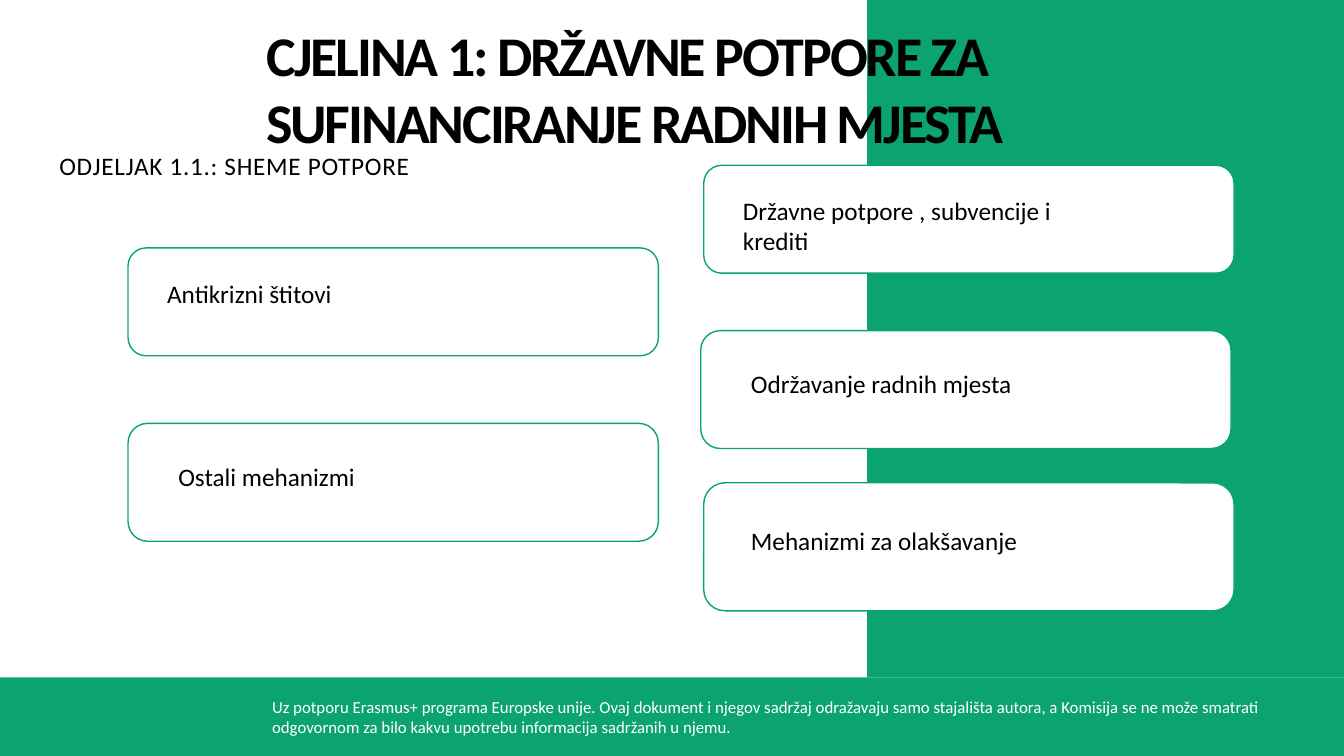
from dataclasses import dataclass

from pptx import Presentation
from pptx.dml.color import RGBColor
from pptx.enum.shapes import MSO_SHAPE as Shape
from pptx.enum.text import MSO_ANCHOR as Anchor, MSO_AUTO_SIZE as AutoSize, PP_ALIGN as Align
from pptx.util import Inches, Pt


@dataclass(frozen=True)
class Theme:
    font: str = "Calibri"
    green: RGBColor = RGBColor(0x0C, 0xA3, 0x73)
    white: RGBColor = RGBColor(0xFF, 0xFF, 0xFF)
    black: RGBColor = RGBColor(0, 0, 0)
    title: int = 40
    body: int = 18
    note: int = 12


class SlideBuilder:
    def __init__(self, slide, theme):
        self.s = slide
        self.theme = theme

    def _write(self, sp, text, size, color, bold=False, spacing=0):
        tf = sp.text_frame
        tf.word_wrap = True
        tf.text = text
        p = tf.paragraphs[0]
        p.alignment = Align.LEFT
        r = p.runs[0]
        r.font.name = self.theme.font
        r.font.size = Pt(size)
        r.font.bold = bold
        r.font.color.rgb = color
        if spacing:
            r.font._element.set("spc", str(int(spacing * 100)))
        return tf

    def _shape(self, kind, x, y, w, h, fill):
        sp = self.s.shapes.add_shape(kind, Inches(x), Inches(y), Inches(w), Inches(h))
        sp.shadow.inherit = False
        sp.fill.solid()
        sp.fill.fore_color.rgb = fill
        return sp

    def panel(self, x, y, w, h):
        self._shape(Shape.RECTANGLE, x, y, w, h, self.theme.green).line.fill.background()

    def title(self, text, x, y, w, h):
        sp = self.s.shapes.title
        sp.left, sp.top, sp.width, sp.height = Inches(x), Inches(y), Inches(w), Inches(h)
        tf = self._write(sp, text, self.theme.title, self.theme.black, bold=True, spacing=-1.5)
        tf.auto_size = AutoSize.NONE
        tf.vertical_anchor = Anchor.TOP
        tf.margin_left = tf.margin_right = tf.margin_bottom = 0
        tf.margin_top = Inches(0.01)
        # Bring the title in front of the green panel
        sp.element.getparent().append(sp.element)

    def text(self, text, x, y, w, h, size, color, spacing=0):
        sp = self.s.shapes.add_textbox(Inches(x), Inches(y), Inches(w), Inches(h))
        self._write(sp, text, size, color, spacing=spacing)

    def card(self, text, x, y, h, dx, dy):
        """Rounded card with its label offset by dx, dy from the corner."""
        sp = self._shape(Shape.ROUNDED_RECTANGLE, x, y, 5.26, h, self.theme.white)
        sp.line.color.rgb = self.theme.green
        sp.line.width = Pt(1)
        self.text(text, x + dx, y + dy, 3.87, 0.4, self.theme.body, self.theme.black)


def main():
    prs = Presentation()
    prs.slide_width, prs.slide_height = Inches(13.33), Inches(7.5)
    theme = Theme()
    slide = SlideBuilder(prs.slides.add_slide(prs.slide_layouts[5]), theme)

    # Footer band and right panel
    slide.panel(0, 6.72, 13.33, 0.78)
    slide.text(
        "Uz potporu Erasmus+ programa Europske unije. Ovaj dokument i njegov sadržaj "
        "odražavaju samo stajališta autora, a Komisija se ne može smatrati odgovornom "
        "za bilo kakvu upotrebu informacija sadržanih u njemu.",
        2.6, 6.86, 10.42, 0.5, theme.note, theme.white)
    slide.panel(8.6, 0, 4.73, 6.72)

    # Headings
    slide.title("CJELINA 1: DRŽAVNE POTPORE ZA SUFINANCIRANJE RADNIH MJESTA",
                2.64, 0.19, 8.98, 0.69)
    slide.text("ODJELJAK 1.1.: SHEME POTPORE", 0.49, 1.44, 6.66, 0.4,
               theme.body, theme.black, spacing=0.5)

    # Topic cards: text, left, top, height, label offset
    cards = [
        ("Državne potpore , subvencije i krediti", 6.98, 1.64, 1.07, 0.29, 0.25),
        ("Održavanje radnih mjesta", 6.95, 3.28, 1.17, 0.4, 0.32),
        ("Mehanizmi za olakšavanje", 6.98, 4.79, 1.27, 0.37, 0.37),
        ("Antikrizni štitovi", 1.27, 2.46, 1.07, 0.29, 0.25),
        ("Ostali mehanizmi", 1.27, 4.2, 1.17, 0.4, 0.33),
    ]
    for card in cards:
        slide.card(*card)

    prs.save("out.pptx")


if __name__ == "__main__":
    main()
